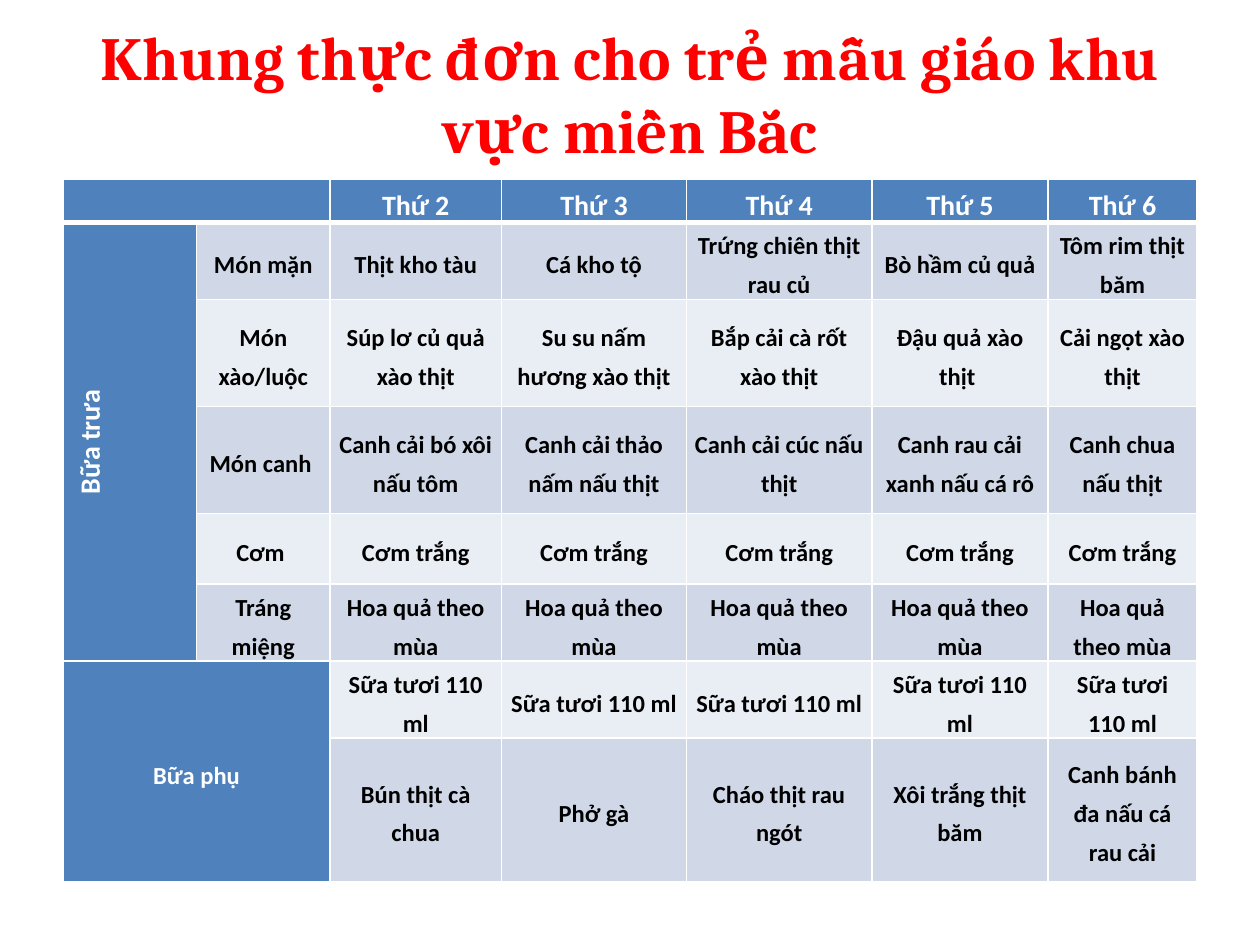
from lxml import etree
from pptx import Presentation
from pptx.dml import color
from pptx.enum import text as t
from pptx.oxml import ns
from pptx.util import Inches, Pt

BLUE, WHITE, BLACK, RED = "4F81BD", "FFFFFF", "000000", "FF0000"
BANDS = "D0D8E8", "E9EDF4"
WIDTHS = 1.06, 1.06, 1.36, 1.47, 1.47, 1.4, 1.18
HEIGHTS = 0.34, 0.61, 0.85, 0.85, 0.56, 0.61, 0.61, 1.14
MENU = [
    ["", "", "Thứ 2", "Thứ 3", "Thứ 4", "Thứ 5", "Thứ 6"],
    ["Bữa trưa", "Món mặn", "Thịt kho tàu", "Cá kho tộ",
     "Trứng chiên thịt rau củ", "Bò hầm củ quả", "Tôm rim thịt băm"],
    ["", "Món xào/luộc", "Súp lơ củ quả xào thịt", "Su su nấm hương xào thịt",
     "Bắp cải cà rốt xào thịt", "Đậu quả xào thịt ", "Cải ngọt xào thịt"],
    ["", "Món canh ", "Canh cải bó xôi nấu tôm", "Canh cải thảo nấm nấu thịt",
     "Canh cải cúc nấu thịt", "Canh rau cải xanh nấu cá rô", "Canh chua nấu thịt"],
    ["", "Cơm "] + ["Cơm trắng"] * 5,
    ["", "Tráng miệng"] + ["Hoa quả theo mùa"] * 5,
    ["Bữa phụ", ""] + ["Sữa tươi 110 ml"] * 5,
    ["", "", "Bún thịt cà chua", "Phở gà", "Cháo thịt rau ngót",
     "Xôi trắng thịt băm", "Canh bánh đa nấu cá rau cải"],
]
SPANS = [(0, 0, 0, 1), (1, 0, 5, 0), (6, 0, 7, 1)]  # first row, col; last row, col


def rgb(code):
    return color.RGBColor.from_string(code)


def write(frame, words, size=14, font="Calibri", ink=BLACK, lead=None, gap=None):
    para = frame.paragraphs[0]
    para.alignment = t.PP_ALIGN.CENTER
    para.line_spacing = lead
    if gap is not None:
        para.space_before = para.space_after = Pt(gap)
    if not words:
        para.font.size = Pt(size)
        return
    run = para.add_run()
    run.text = words
    run.font.size, run.font.name, run.font.bold = Pt(size), font, True
    run.font.color.rgb = rgb(ink)


class Deck:
    def __init__(self):
        self.file = Presentation()
        self.file.slide_width, self.file.slide_height = Inches(10), Inches(7.5)
        self.slide = self.file.slides.add_slide(self.file.slide_layouts[6])

    def title(self, words, *box):
        frame = self.slide.shapes.add_textbox(*map(Inches, box)).text_frame
        frame.word_wrap = True
        frame.vertical_anchor = t.MSO_ANCHOR.MIDDLE
        write(frame, words, size=35, font="Cambria", ink=RED)

    def edge(self, cell, side, width):
        line = etree.SubElement(cell._tc.get_or_add_tcPr(), ns.qn(f"a:ln{side}"), w=str(Pt(width)))
        fill = etree.SubElement(line, ns.qn("a:solidFill"))
        etree.SubElement(fill, ns.qn("a:srgbClr"), val=WHITE)

    def cell(self, cell, words, fill, **form):
        for side, width in form.pop("edges").items():
            self.edge(cell, side, width)
        cell.fill.solid()
        cell.fill.fore_color.rgb = rgb(fill)
        cell.vertical_anchor = t.MSO_ANCHOR.MIDDLE
        cell.margin_left = cell.margin_right = Inches(0.06)
        cell.margin_top = cell.margin_bottom = 0
        write(cell.text_frame, words, lead=1.3, gap=4.8, **form)

    def table(self, left, top):
        box = map(Inches, (left, top, sum(WIDTHS), sum(HEIGHTS)))
        grid = self.slide.shapes.add_table(len(HEIGHTS), len(WIDTHS), *box).table
        for col, width in zip(grid.columns, WIDTHS):
            col.width = Inches(width)
        for row, height in zip(grid.rows, HEIGHTS):
            row.height = Inches(height)
        for r, c, last, end in SPANS:
            grid.cell(r, c).merge(grid.cell(last, end))
        for r, row in enumerate(MENU):
            edges = {"L": 1, "R": 1, "T": 3 if r == 1 else 1, "B": 3 if r == 0 else 1}
            for c, words in enumerate(row):
                head = r == 0 or c == 0 or (c == 1 and r > 5)
                self.cell(grid.cell(r, c), words, BLUE if head else BANDS[(r + 1) % 2],
                          edges=edges, ink=WHITE if head else BLACK,
                          size=16 if head and r < 6 else 14)
        grid.cell(1, 0)._tc.tcPr.set("vert", "vert270")


if __name__ == "__main__":
    deck = Deck()
    deck.title("Khung thực đơn cho trẻ mẫu giáo khu vực miền Bắc", 0.5, 0.3, 9, 0.87)
    deck.table(0.5, 1.42)
    deck.file.save("out.pptx")
